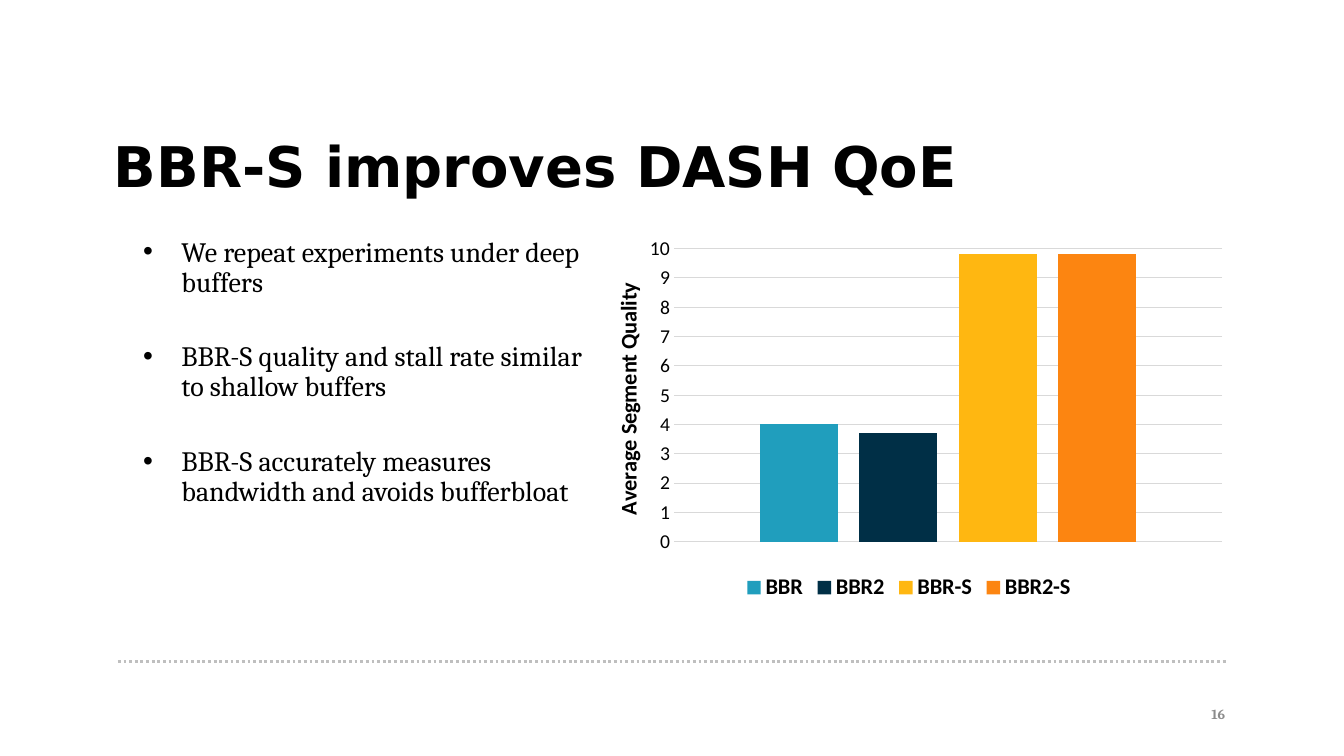
from dataclasses import dataclass

from lxml.etree import SubElement
from pptx import Presentation
from pptx.chart.chart import Chart
from pptx.chart.data import CategoryChartData
from pptx.dml.color import RGBColor
from pptx.enum.chart import XL_CHART_TYPE, XL_LEGEND_POSITION, XL_TICK_MARK
from pptx.enum.dml import MSO_LINE
from pptx.enum.shapes import MSO_CONNECTOR
from pptx.enum.text import MSO_ANCHOR, PP_ALIGN
from pptx.oxml.ns import qn
from pptx.slide import Slide
from pptx.text.text import Font
from pptx.util import Inches, Pt

COLORS = {
    "text": "000000",
    "page_number": "8C8C8C",
    "rule": "BFBFBF",
    "grid": "D9D9D9",
    "BBR": "209EBD",
    "BBR2": "002F46",
    "BBR-S": "FFB711",
    "BBR2-S": "FC8511",
}
SEGMENT_QUALITY = {"BBR": 4, "BBR2": 3.7, "BBR-S": 9.8, "BBR2-S": 9.8}


@dataclass
class TextBlock:
    lines: list[str]
    left: float
    top: float
    width: float
    height: float
    font: str
    size: float
    color: str = "text"
    bold: bool = False
    line_spacing: float = 1.0
    gap: float = 0
    align: PP_ALIGN = PP_ALIGN.LEFT
    anchor: MSO_ANCHOR = MSO_ANCHOR.TOP
    margin: float = 0
    bulleted: bool = False


TEXT_BLOCKS = [
    TextBlock(["BBR-S improves DASH QoE"], 1.13, 1.49, 11, 1.16,
              "DejaVu Sans", 40, bold=True, line_spacing=0.7),
    TextBlock(["We repeat experiments under deep buffers",
               "BBR-S quality and stall rate similar to shallow buffers",
               "BBR-S accurately measures bandwidth and avoids bufferbloat"],
              1.17, 2.36, 4.61, 3.66, "Cambria", 20,
              line_spacing=0.9, gap=31.5, bulleted=True),
    TextBlock(["16"], 9.25, 6.88, 3, 0.4, "Cambria", 10, "page_number", bold=True,
              align=PP_ALIGN.RIGHT, anchor=MSO_ANCHOR.MIDDLE, margin=0.1),
]


def rgb(name: str) -> RGBColor:
    return RGBColor.from_string(COLORS[name])


def style_font(font: Font, name: str, size: float, color: str = "text", bold: bool = False) -> None:
    font.name, font.size, font.bold = name, Pt(size), bold
    font.color.rgb = rgb(color)


def add_text(slide: Slide, block: TextBlock) -> None:
    frame = slide.shapes.add_textbox(Inches(block.left), Inches(block.top),
                                     Inches(block.width), Inches(block.height)).text_frame
    frame.word_wrap = True
    frame.vertical_anchor = block.anchor
    frame.margin_left = frame.margin_right = Inches(block.margin)
    frame.margin_top = frame.margin_bottom = Inches(block.margin / 2)
    for index, line in enumerate(block.lines):
        paragraph = frame.paragraphs[0] if index == 0 else frame.add_paragraph()
        paragraph.text = line
        paragraph.alignment = block.align
        paragraph.line_spacing = block.line_spacing
        paragraph.space_before = Pt(block.gap if index else 0)
        if block.bulleted:
            properties = paragraph._p.get_or_add_pPr()
            properties.set("marL", str(Inches(0.63)))
            properties.set("indent", str(Inches(-0.38)))
            SubElement(properties, qn("a:buFont"), typeface="Arial")
            SubElement(properties, qn("a:buChar"), char="•")
        style_font(paragraph.font, block.font, block.size, block.color, block.bold)


def add_footer_rule(slide: Slide) -> None:
    rule = slide.shapes.add_connector(MSO_CONNECTOR.STRAIGHT, Inches(1.17), Inches(6.56),
                                      Inches(12.17), Inches(6.56))
    rule.line.color.rgb = rgb("rule")
    rule.line.width = Pt(2)
    rule.line.dash_style = MSO_LINE.ROUND_DOT
    SubElement(rule._element.spPr, qn("a:effectLst"))


def set_layout(parent, index: int, **settings: str) -> None:
    """Place a chart part by fractions of the chart's size."""
    for old in parent.findall(qn("c:layout")):
        parent.remove(old)
    layout = SubElement(parent, qn("c:layout"))
    manual = SubElement(layout, qn("c:manualLayout"))
    for tag, value in settings.items():
        SubElement(manual, qn(f"c:{tag}"), val=value)
    parent.insert(index, layout)


def style_value_axis(chart: Chart) -> None:
    axis = chart.value_axis
    axis.minimum_scale, axis.maximum_scale, axis.major_unit = 0, 10, 1
    axis.major_tick_mark = axis.minor_tick_mark = XL_TICK_MARK.NONE
    axis.format.line.fill.background()
    axis.major_gridlines.format.line.color.rgb = rgb("grid")
    axis.major_gridlines.format.line.width = Pt(0.75)
    style_font(axis.tick_labels.font, "Calibri", 14)
    heading = axis.axis_title.text_frame
    heading.text = "Average Segment Quality"
    style_font(heading.paragraphs[0].font, "Calibri", 16, bold=True)
    title = axis.axis_title._element
    title.find(".//" + qn("a:bodyPr")).set("rot", "-5400000")
    set_layout(title, 1, xMode="edge", yMode="edge", x="0.04", y="0.13")


def add_quality_chart(slide: Slide) -> None:
    data = CategoryChartData()
    data.categories = ["1"]
    for name, quality in SEGMENT_QUALITY.items():
        data.add_series(name, [quality])
    chart = slide.shapes.add_chart(XL_CHART_TYPE.COLUMN_CLUSTERED, Inches(5.78), Inches(2.28),
                                   Inches(6.47), Inches(3.73), data).chart
    style_font(chart.font, "Calibri", 10)
    chart.has_title = False
    chart.category_axis.visible = False
    plot = chart.plots[0]
    plot.gap_width, plot.overlap, plot.vary_by_categories = 219, -27, False
    for series in plot.series:
        series.format.fill.solid()
        series.format.fill.fore_color.rgb = rgb(series.name)
    style_value_axis(chart)
    chart.has_legend = True
    chart.legend.position = XL_LEGEND_POSITION.BOTTOM
    chart.legend.include_in_layout = False
    style_font(chart.legend.font, "Calibri", 16, bold=True)
    set_layout(chart._chartSpace.find(".//" + qn("c:plotArea")), 0, layoutTarget="inner",
               xMode="edge", yMode="edge", x="0.14", y="0.05", w="0.84", h="0.78")


def main() -> None:
    presentation = Presentation()
    presentation.slide_width, presentation.slide_height = Inches(13.33), Inches(7.5)
    slide = presentation.slides.add_slide(presentation.slide_layouts[6])
    add_footer_rule(slide)
    add_quality_chart(slide)
    for block in TEXT_BLOCKS:
        add_text(slide, block)
    presentation.save("out.pptx")


if __name__ == "__main__":
    main()
